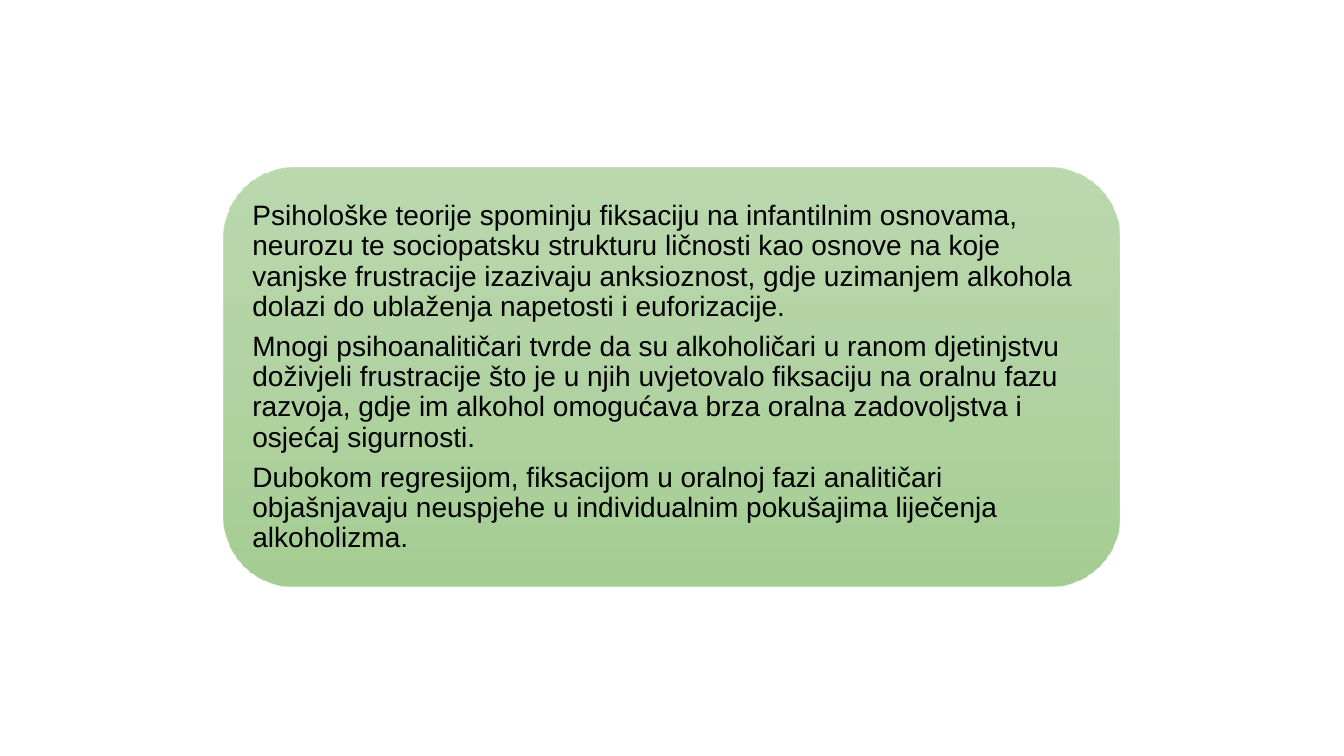
"""Build a slide with psychological theories of alcoholism in one rounded panel."""
from dataclasses import dataclass

from lxml.etree import SubElement
from pptx import Presentation
from pptx.dml.color import RGBColor
from pptx.enum.shapes import MSO_SHAPE as Shape
from pptx.enum.text import MSO_ANCHOR as Anchor, PP_ALIGN as Align
from pptx.oxml.ns import qn
from pptx.util import Pt

THEORIES = [
    "Psihološke teorije spominju fiksaciju na infantilnim osnovama, neurozu te "
    "sociopatsku strukturu ličnosti kao osnove na koje vanjske frustracije izazivaju "
    "anksioznost, gdje uzimanjem alkohola dolazi do ublaženja napetosti i euforizacije.",
    "Mnogi psihoanalitičari tvrde da su alkoholičari u ranom djetinjstvu doživjeli "
    "frustracije što je u njih uvjetovalo fiksaciju na oralnu fazu razvoja, gdje im "
    "alkohol omogućava brza oralna zadovoljstva i osjećaj sigurnosti.",
    "Dubokom regresijom, fiksacijom u oralnoj fazi analitičari objašnjavaju neuspjehe "
    "u individualnim pokušajima liječenja alkoholizma.",
]
SLIDE_SIZE = (1344, 756)
PANEL_BOX = (224, 168, 896, 419)
PANEL_INSET = 8


@dataclass(frozen=True)
class Theme:
    """Colours, font and type sizes of the slide."""
    font: str = "Arial"
    text_size: int = 20
    space_after: int = 7
    line_spacing: float = 0.9
    text: str = "000000"
    gradient: tuple = ("B5D5A7", "AACE9A", "9CC987")
    opacity: int = 90


THEME = Theme()


def px(length):
    """Turn px into EMU."""
    return round(length * 914400 / 100.8)


def fill_gradient(shape):
    """Fill a shape with evenly spaced, slightly transparent stops from top to bottom."""
    shape.fill.gradient()
    shape.fill.gradient_angle = 270
    stops = shape.element.spPr.find(qn("a:gradFill")).find(qn("a:gsLst"))
    for stop in list(stops):
        stops.remove(stop)
    step = 100000 // (len(THEME.gradient) - 1)
    for index, color in enumerate(THEME.gradient):
        stop = SubElement(stops, qn("a:gs"), pos=str(index * step))
        rgb = SubElement(stop, qn("a:srgbClr"), val=color)
        SubElement(rgb, qn("a:alpha"), val=str(THEME.opacity * 1000))


def write_theories(text_frame):
    """Write the theories as left-aligned paragraphs."""
    text_frame.word_wrap = True
    text_frame.vertical_anchor = Anchor.MIDDLE
    text_frame.margin_left = text_frame.margin_right = px(PANEL_INSET)
    text_frame.margin_top = text_frame.margin_bottom = px(PANEL_INSET)
    text_frame.text = "\n".join(THEORIES)
    for paragraph in text_frame.paragraphs:
        paragraph.alignment = Align.LEFT
        paragraph.line_spacing = THEME.line_spacing
        paragraph.space_after = Pt(THEME.space_after)
        for run in paragraph.runs:
            run.font.name = THEME.font
            run.font.size = Pt(THEME.text_size)
            run.font.color.rgb = RGBColor.from_string(THEME.text)


def main():
    """Build and save the presentation."""
    presentation = Presentation()
    presentation.slide_width, presentation.slide_height = map(px, SLIDE_SIZE)
    slide = presentation.slides.add_slide(presentation.slide_layouts[6])
    panel = slide.shapes.add_shape(Shape.ROUNDED_RECTANGLE, *map(px, PANEL_BOX))
    panel.shadow.inherit = False
    panel.line.fill.background()
    fill_gradient(panel)
    write_theories(panel.text_frame)
    presentation.save("out.pptx")


if __name__ == "__main__":
    main()
